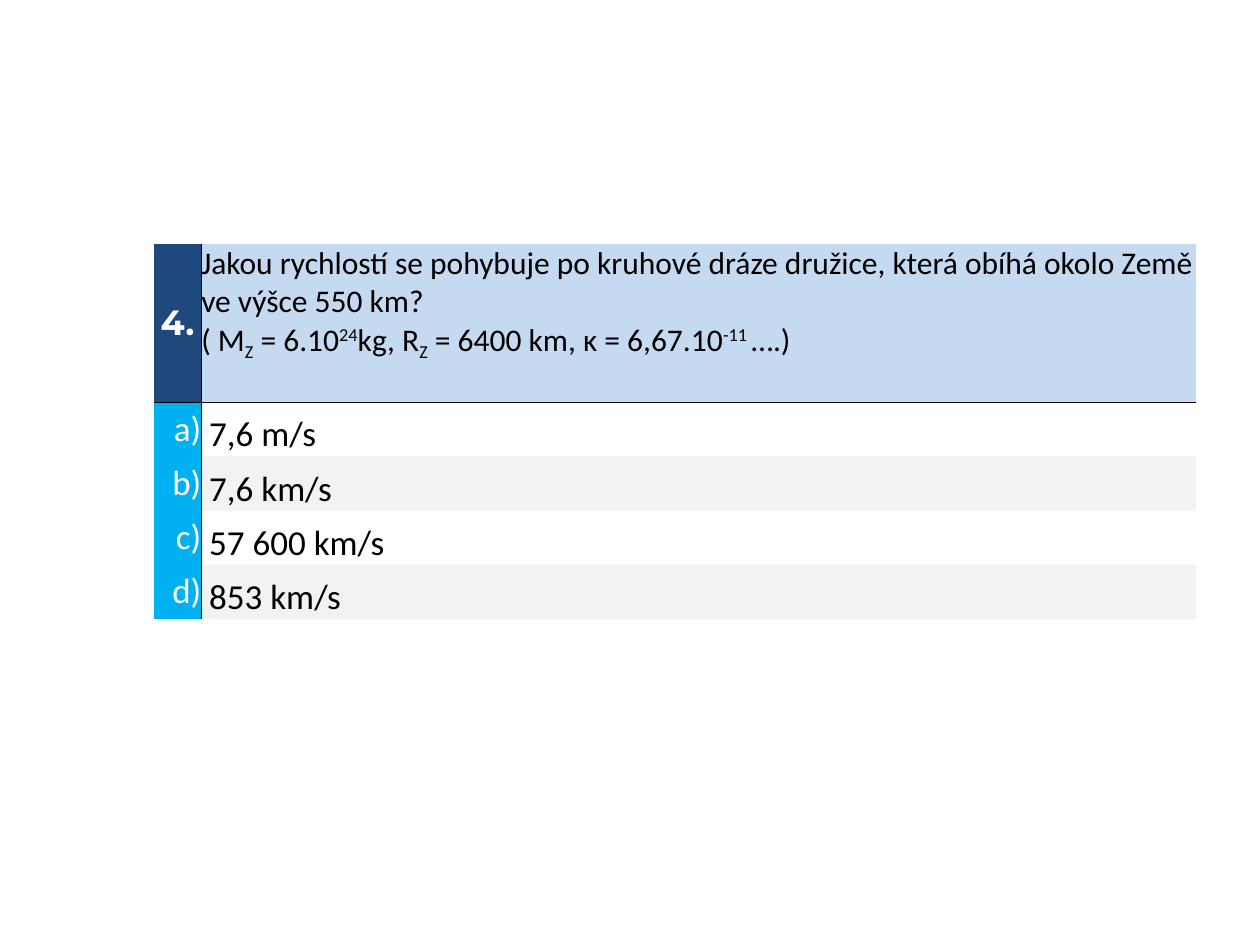
"""Build a quiz slide with one question and four answers in a table."""
from lxml import etree
from pptx import Presentation
from pptx.dml.color import RGBColor
from pptx.enum import text
from pptx.oxml import ns
from pptx.util import Pt

NUMBER = "4."
QUESTION = [
    [("Jakou rychlostí se pohybuje po kruhové dráze družice, "
      "která obíhá okolo Země ve výšce 550 km?", 0)],
    [("( M", 0), ("Z", -25), (" = 6.10", 0), ("24", 30), ("kg, R", 0), ("Z", -25),
     (" = 6400 km, κ = 6,67.10", 0), ("-11 ", 30), ("….)", 0)],
]
ANSWERS = [("a)", " 7,6 m/s"), ("b)", " 7,6 km/s"),
           ("c)", " 57 600 km/s"), ("d)", " 853 km/s")]

LEFT, TOP = 87.84, 139.5
COLUMN_WIDTHS = [27.2, 568.2]
QUESTION_HEIGHT, ANSWER_HEIGHT = 90.4, 30.95
NAVY, PALE_BLUE, SKY, GREY = "1F497D", "C5D9F1", "00B0F0", "F2F2F2"
WHITE, BLACK = "FFFFFF", "000000"
ALIGN, ANCHOR = text.PP_ALIGN, text.MSO_ANCHOR


def color(value):
    return RGBColor.from_string(value)


def set_borders(cell, drawn_sides):
    properties = cell._tc.get_or_add_tcPr()
    for side in "LRTB":
        line = etree.SubElement(properties, ns.qn(f"a:ln{side}"), w=str(Pt(0.5)))
        if side in drawn_sides:
            fill = etree.SubElement(line, ns.qn("a:solidFill"))
            etree.SubElement(fill, ns.qn("a:srgbClr"), val=BLACK)
        else:
            etree.SubElement(line, ns.qn("a:noFill"))


def fill_cell(cell, paragraphs, borders, fill=None, ink=BLACK, size=20, font="Calibri",
              bold=False, align=ALIGN.LEFT, anchor=ANCHOR.MIDDLE):
    cell.margin_left = cell.margin_right = cell.margin_top = cell.margin_bottom = 0
    cell.vertical_anchor = anchor
    set_borders(cell, borders)
    if fill:
        cell.fill.solid()
        cell.fill.fore_color.rgb = color(fill)
    else:
        cell.fill.background()
    frame = cell.text_frame
    for index, runs in enumerate(paragraphs):
        paragraph = frame.add_paragraph() if index else frame.paragraphs[0]
        paragraph.alignment = align
        for words, baseline in runs:
            run = paragraph.add_run()
            run.text = words
            run.font.name, run.font.size, run.font.bold = font, Pt(size), bold
            run.font.color.rgb = color(ink)
            if baseline:
                run._r.get_or_add_rPr().set("baseline", str(baseline * 1000))


def main():
    presentation = Presentation()
    presentation.slide_width, presentation.slide_height = Pt(720), Pt(540)
    slide = presentation.slides.add_slide(presentation.slide_layouts[6])
    heights = [QUESTION_HEIGHT] + [ANSWER_HEIGHT] * len(ANSWERS)
    table = slide.shapes.add_table(len(heights), len(COLUMN_WIDTHS), Pt(LEFT), Pt(TOP),
                                   Pt(sum(COLUMN_WIDTHS)), Pt(sum(heights))).table
    table.first_row = table.horz_banding = False
    for column, width in zip(table.columns, COLUMN_WIDTHS):
        column.width = Pt(width)
    for row, height in zip(table.rows, heights):
        row.height = Pt(height)

    fill_cell(table.cell(0, 0), [[(NUMBER, 0)]], "RB", NAVY, WHITE,
              font="Montserrat", bold=True, align=ALIGN.CENTER)
    fill_cell(table.cell(0, 1), QUESTION, "LB", PALE_BLUE, size=18, anchor=ANCHOR.TOP)
    for row, (letter, answer) in enumerate(ANSWERS, 1):
        top = "T" if row == 1 else ""
        fill_cell(table.cell(row, 0), [[(letter, 0)]], "R" + top, SKY, WHITE,
                  align=ALIGN.RIGHT)
        fill_cell(table.cell(row, 1), [[(answer, 0)]], "L" + top,
                  None if row % 2 else GREY, anchor=ANCHOR.BOTTOM)
    presentation.save("out.pptx")


if __name__ == "__main__":
    main()
